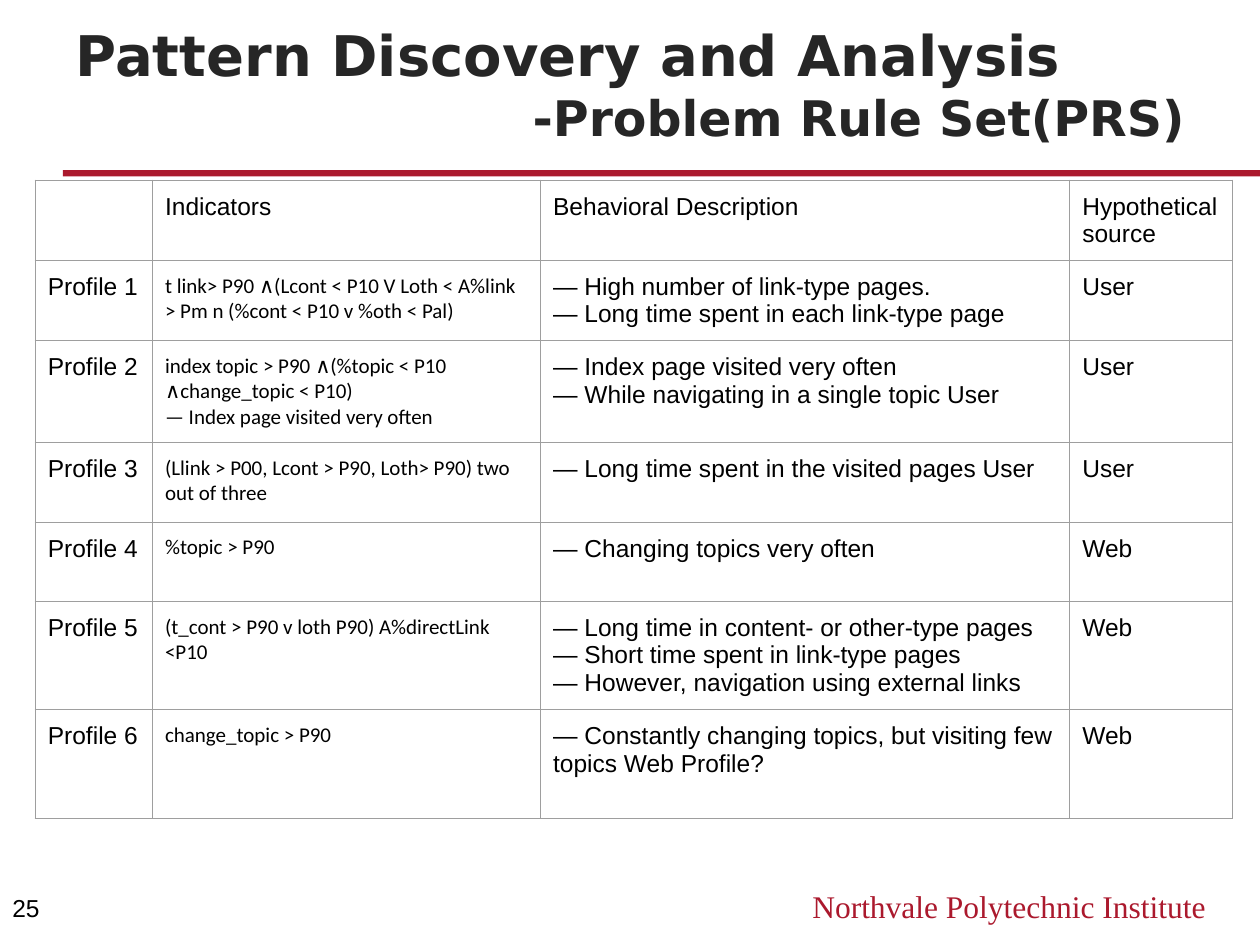
import dataclasses

import lxml.etree
import pptx
import pptx.dml.color
import pptx.enum.shapes
import pptx.enum.text
import pptx.oxml.ns
import pptx.util

Inches = pptx.util.Inches
ALIGN = pptx.enum.text.PP_ALIGN
ANCHOR = pptx.enum.text.MSO_ANCHOR


@dataclasses.dataclass(frozen=True)
class Theme:
    """Colours, fonts and type sizes of the deck."""
    crimson: str = "AB192D"
    heading: str = "262626"
    ink: str = "000000"
    border: str = "9E9E9E"
    title_font: str = "DejaVu Sans"
    body_font: str = "Arial"
    rule_font: str = "Calibri"
    footer_font: str = "Times New Roman"
    title_size: int = 32
    subtitle_size: int = 28
    footer_size: int = 18
    body_size: int = 14
    rule_size: int = 12
    border_width: float = 0.75


THEME = Theme()
COLUMN_WIDTHS = (0.93, 3.08, 4.2, 1.29)
ROW_HEIGHTS = (0.63, 0.63, 0.81, 0.63, 0.63, 0.86, 0.86)
PROFILES = (
    ("", "Indicators", "Behavioral Description", "Hypothetical source"),
    ("Profile 1",
     "t link> P90 ∧(Lcont < P10 V Loth < A%link > Pm n (%cont < P10 v %oth < Pal)",
     "— High number of link-type pages.\v— Long time spent in each link-type page",
     "User"),
    ("Profile 2",
     "index topic > P90 ∧(%topic < P10 ∧change_topic < P10)\n— Index page visited very often",
     "— Index page visited very often\v— While navigating in a single topic User",
     "User"),
    ("Profile 3",
     "(Llink > P00, Lcont > P90, Loth> P90) two out of three",
     "— Long time spent in the visited pages User",
     "User"),
    ("Profile 4", "%topic > P90", "— Changing topics very often", "Web"),
    ("Profile 5",
     "(t_cont > P90 v loth P90) A%directLink <P10",
     "— Long time in content- or other-type pages\n"
     "— Short time spent in link-type pages\n"
     "— However, navigation using external links",
     "Web"),
    ("Profile 6",
     "change_topic > P90",
     "— Constantly changing topics, but visiting few topics Web Profile?",
     "Web"),
)


def color(value):
    """Return the colour object for a hex string."""
    return pptx.dml.color.RGBColor.from_string(value)


def write_para(para, text, *, size=THEME.body_size, font=THEME.body_font,
               ink=THEME.ink, bold=False, align=ALIGN.LEFT):
    """Fill one paragraph with formatted text."""
    para.text = text
    para.alignment = align
    for span in para.runs:
        span.font.size = pptx.util.Pt(size)
        span.font.name = font
        span.font.bold = bold
        span.font.color.rgb = color(ink)


def write_text(frame, text, **style):
    """Write one paragraph for each line of the text."""
    for index, line in enumerate(text.split("\n")):
        para = frame.add_paragraph() if index else frame.paragraphs[0]
        write_para(para, line, **style)


def add_label(page, box, text, anchor=ANCHOR.TOP, **style):
    """Add a wrapping text box."""
    frame = page.shapes.add_textbox(*map(Inches, box)).text_frame
    frame.word_wrap = True
    frame.vertical_anchor = anchor
    write_text(frame, text, **style)


def add_rule(page, box):
    """Add the coloured bar under the title."""
    bar = page.shapes.add_shape(
        pptx.enum.shapes.MSO_SHAPE.RECTANGLE, *map(Inches, box))
    bar.shadow.inherit = False
    bar.fill.solid()
    bar.fill.fore_color.rgb = color(THEME.crimson)
    bar.line.fill.background()


def fill_title(page, box, heading, subheading):
    """Place the two-line title in its placeholder."""
    title = page.shapes.title
    title.left, title.top, title.width, title.height = map(Inches, box)
    frame = title.text_frame
    frame.auto_size = pptx.enum.text.MSO_AUTO_SIZE.NONE
    frame.word_wrap = True
    frame.vertical_anchor = ANCHOR.BOTTOM
    frame.margin_left = frame.margin_right = Inches(0.1)
    frame.margin_top = frame.margin_bottom = Inches(0.1)
    style = {"font": THEME.title_font, "ink": THEME.heading, "bold": True}
    write_para(frame.paragraphs[0], heading, size=THEME.title_size, **style)
    write_para(frame.add_paragraph(), subheading, size=THEME.subtitle_size,
               align=ALIGN.RIGHT, **style)


def style_cell(cell):
    """Give a cell thin borders, even margins and no fill."""
    properties = cell._tc.get_or_add_tcPr()
    qn = pptx.oxml.ns.qn
    for side in ("lnL", "lnR", "lnT", "lnB"):
        line = lxml.etree.SubElement(
            properties, qn(f"a:{side}"), w=str(pptx.util.Pt(THEME.border_width)))
        fill = lxml.etree.SubElement(line, qn("a:solidFill"))
        lxml.etree.SubElement(fill, qn("a:srgbClr"), val=THEME.border)
    cell.fill.background()
    cell.margin_left = cell.margin_right = Inches(0.1)
    cell.margin_top = cell.margin_bottom = Inches(0.1)


def add_profile_table(page, left, top):
    """Add the table of problem profiles."""
    box = (left, top, sum(COLUMN_WIDTHS), sum(ROW_HEIGHTS))
    table = page.shapes.add_table(
        len(ROW_HEIGHTS), len(COLUMN_WIDTHS), *map(Inches, box)).table
    table.first_row = table.horz_banding = False
    for column, width in zip(table.columns, COLUMN_WIDTHS):
        column.width = Inches(width)
    for row, height in zip(table.rows, ROW_HEIGHTS):
        row.height = Inches(height)
    rule_style = {"font": THEME.rule_font, "size": THEME.rule_size}
    for row_index, texts in enumerate(PROFILES):
        for column_index, text in enumerate(texts):
            cell = table.cell(row_index, column_index)
            style_cell(cell)
            is_rule = row_index > 0 and column_index == 1
            write_text(cell.text_frame, text, **(rule_style if is_rule else {}))


def add_footer(page, top):
    """Add the page number and the institute name."""
    add_label(page, (6, top, 3.67, 0.4), "Northvale Polytechnic Institute",
              size=THEME.footer_size, font=THEME.footer_font,
              ink=THEME.crimson, align=ALIGN.RIGHT)
    add_label(page, (0, top, 0.5, 0.43), "25", anchor=ANCHOR.MIDDLE)


def main():
    """Build and save the deck."""
    deck = pptx.Presentation()
    deck.slide_width, deck.slide_height = Inches(10), Inches(7.5)
    page = deck.slides.add_slide(deck.slide_layouts.get_by_name("Title Only"))
    add_rule(page, (0.5, 1.35, 9.5, 0.05))
    fill_title(page, (0.5, 0.38, 9, 0.88),
               "Pattern Discovery and Analysis", "-Problem Rule Set(PRS)")
    add_profile_table(page, 0.28, 1.43)
    add_footer(page, 6.99)
    deck.save("out.pptx")


if __name__ == "__main__":
    main()
